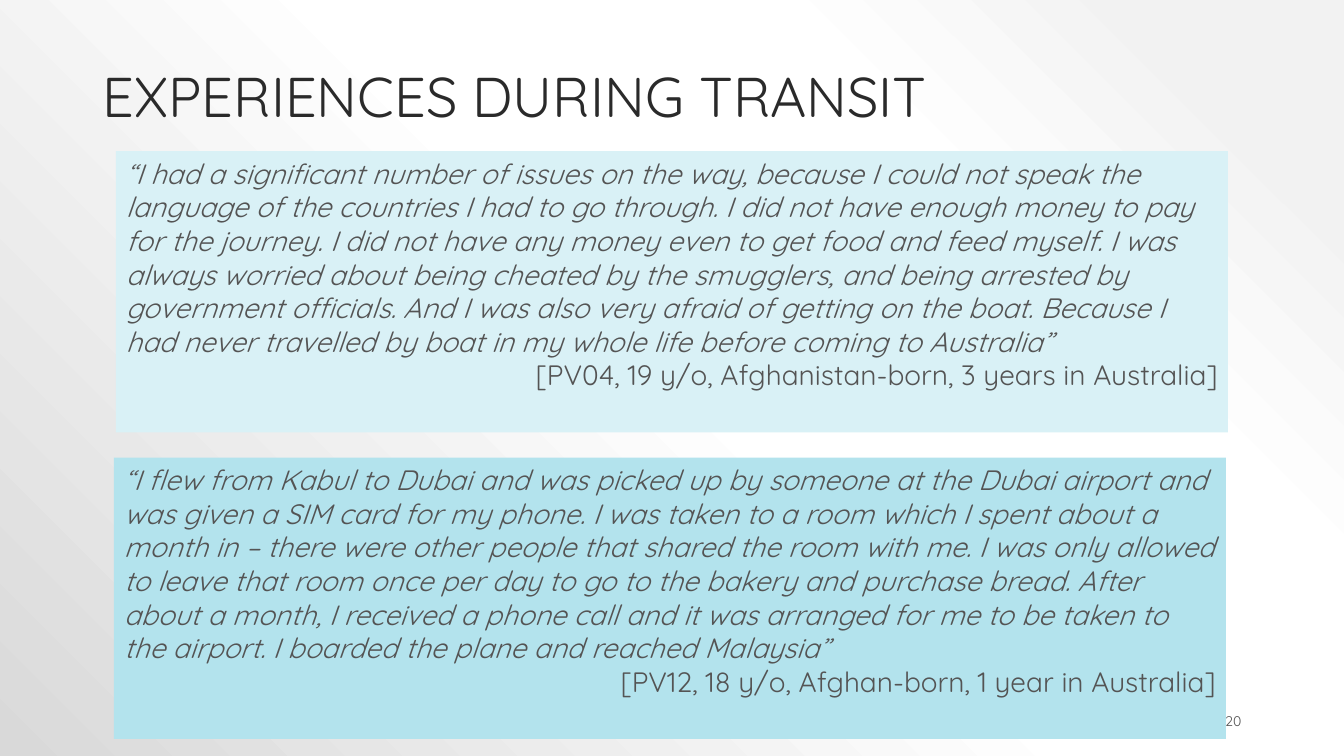
from pptx import Presentation
from pptx.dml.color import RGBColor
from pptx.enum.shapes import MSO_SHAPE
from pptx.enum.text import MSO_ANCHOR, MSO_AUTO_SIZE, PP_ALIGN
from pptx.oxml import parse_xml
from pptx.oxml.ns import nsdecls
from pptx.util import Inches, Pt

FONT = "Quicksand"
TITLE_COLOR = "2A2A2A"
TEXT_COLOR = "545454"
BACKGROUND_STOPS = [(10, "F2F2F2"), (28, "FFFFFF"), (48, "FFFFFF"), (100, "D9D9D9")]
QUOTES = [
    (1.15, 1.5, "D9F1F6",
     "“I had a significant number of issues on the way, because I could not speak the "
     "language of the countries I had to go through. I did not have enough money to pay "
     "for the journey. I did not have any money even to get food and feed myself. I was "
     "always worried about being cheated by the smugglers, and being arrested by "
     "government officials. And I was also very afraid of getting on the boat. Because I "
     "had never travelled by boat in my whole life before coming to Australia”",
     "[PV04, 19 y/o, Afghanistan-born, 3 years in Australia]"),
    (1.13, 4.54, "B3E3ED",
     "“I flew from Kabul to Dubai and was picked up by someone at the Dubai airport and "
     "was given a SIM card for my phone. I was taken to a room which I spent about a "
     "month in – there were other people that shared the room with me. I was only allowed "
     "to leave that room once per day to go to the bakery and purchase bread. After "
     "about a month, I received a phone call and it was arranged for me to be taken to "
     "the airport. I boarded the plane and reached Malaysia”",
     "[PV12, 18 y/o, Afghan-born, 1 year in Australia]"),
]


def color(hex_string):
    return RGBColor.from_string(hex_string)


def write(paragraph, text, size, hex_color, align=PP_ALIGN.LEFT, italic=False):
    paragraph.text = text
    paragraph.alignment = align
    for run in paragraph.runs:
        run.font.name = FONT
        run.font.size = Pt(size)
        run.font.italic = italic
        run.font.color.rgb = color(hex_color)


def set_background(slide):
    stops = "".join(
        f'<a:gs pos="{position * 1000}"><a:srgbClr val="{hex_color}"/></a:gs>'
        for position, hex_color in BACKGROUND_STOPS)
    background = parse_xml(
        f'<p:bg {nsdecls("p", "a")}><p:bgPr><a:gradFill rotWithShape="1">'
        f'<a:gsLst>{stops}</a:gsLst>'
        '<a:path path="circle"><a:fillToRect l="100000" b="100000"/></a:path>'
        '</a:gradFill><a:effectLst/></p:bgPr></p:bg>')
    slide.element.cSld.insert(0, background)


def set_title(slide, text):
    title = slide.shapes.title
    title.left, title.top = Inches(0.92), Inches(0.3)
    title.width, title.height = Inches(11.5), Inches(1.04)
    frame = title.text_frame
    frame.auto_size = MSO_AUTO_SIZE.NONE
    frame.vertical_anchor = MSO_ANCHOR.BOTTOM
    write(frame.paragraphs[0], text, 40, TITLE_COLOR)
    frame.paragraphs[0].line_spacing = 0.9


def add_quote(slide, left, top, fill, quote, speaker):
    box = slide.shapes.add_shape(
        MSO_SHAPE.RECTANGLE, Inches(left), Inches(top), Inches(11.03), Inches(2.79))
    box.shadow.inherit = False
    box.fill.solid()
    box.fill.fore_color.rgb = color(fill)
    box.line.fill.background()
    frame = box.text_frame
    frame.word_wrap = True
    frame.vertical_anchor = MSO_ANCHOR.TOP
    write(frame.paragraphs[0], quote, 20, TEXT_COLOR, italic=True)
    write(frame.add_paragraph(), speaker, 20, TEXT_COLOR, PP_ALIGN.RIGHT)


def add_page_number(slide, number):
    box = slide.shapes.add_textbox(Inches(8.83), Inches(6.95), Inches(3.58), Inches(0.4))
    frame = box.text_frame
    frame.word_wrap = True
    frame.vertical_anchor = MSO_ANCHOR.MIDDLE
    write(frame.paragraphs[0], number, 10, TEXT_COLOR, PP_ALIGN.RIGHT)


def main():
    presentation = Presentation()
    presentation.slide_width = Inches(13.33)
    presentation.slide_height = Inches(7.5)
    slide = presentation.slides.add_slide(presentation.slide_layouts[5])
    set_background(slide)
    set_title(slide, "EXPERIENCES DURING TRANSIT")
    for quote in QUOTES:
        add_quote(slide, *quote)
    add_page_number(slide, "20")
    presentation.save("out.pptx")


if __name__ == "__main__":
    main()
